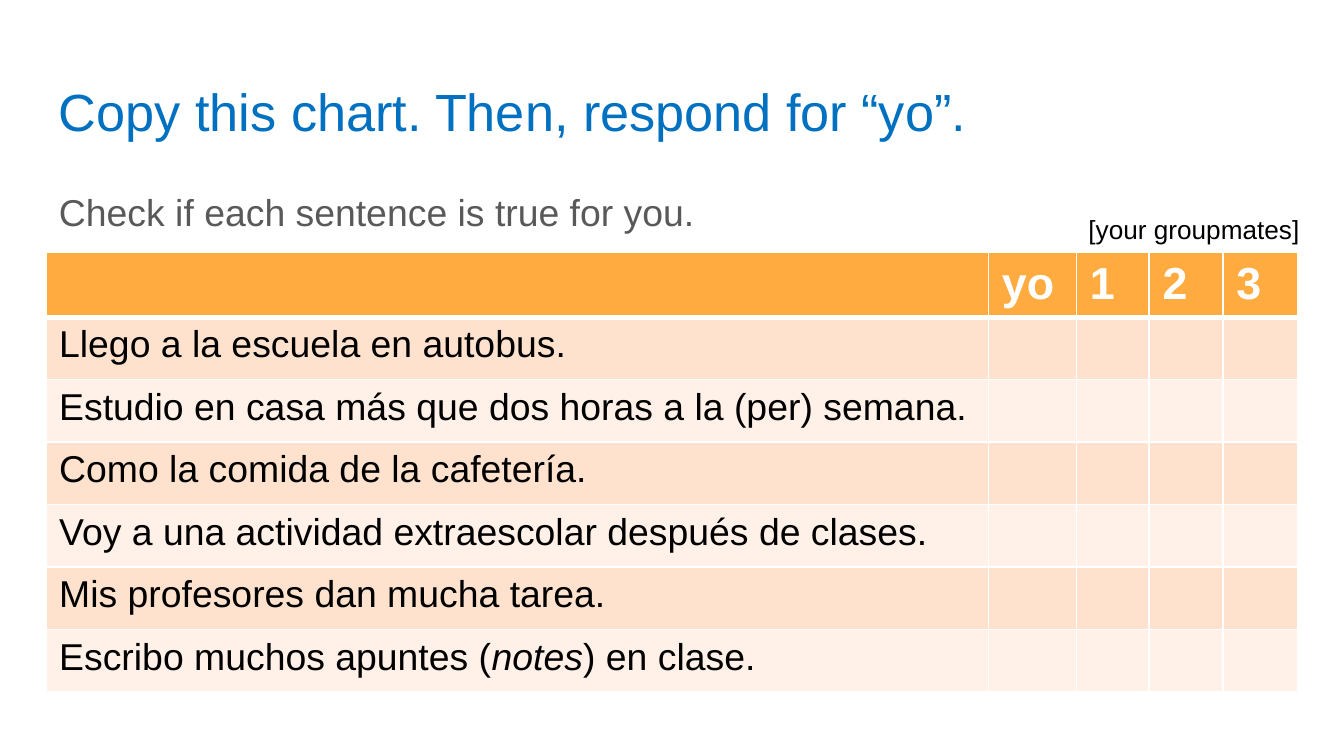
"""Build a Spanish class survey slide with a chart to copy and fill in."""
from dataclasses import dataclass

from lxml.etree import SubElement
from pptx import Presentation
from pptx.dml.color import RGBColor
from pptx.enum.text import MSO_ANCHOR
from pptx.oxml.ns import qn
from pptx.slide import Slide
from pptx.table import Table, _Cell
from pptx.text.text import _Paragraph
from pptx.util import Emu, Pt

PX = 4572
FONT = "Arial"
BLUE = RGBColor(0x00, 0x70, 0xC0)
GRAY = RGBColor(0x59, 0x59, 0x59)
BLACK = RGBColor(0x00, 0x00, 0x00)
WHITE = RGBColor(0xFF, 0xFF, 0xFF)
ORANGE = RGBColor(0xFF, 0xAB, 0x40)
PEACH = RGBColor(0xFF, 0xE2, 0xCD)
CREAM = RGBColor(0xFF, 0xF1, 0xE8)

COLUMN_WIDTHS = (1403, 131, 108, 110, 111)
ROW_HEIGHT = 93
HEADERS = ("", "yo", "1", "2", "3")
SENTENCES = (
    ("Llego a la escuela en autobus.",),
    ("Estudio en casa más que dos horas a la (per) semana.",),
    ("Como la comida de la cafetería.",),
    ("Voy a una actividad extraescolar después de clases.",),
    ("Mis profesores dan mucha tarea.",),
    ("Escribo muchos apuntes (", "notes", ") en clase."),
)


@dataclass(frozen=True)
class Label:
    text: str
    left: int
    top: int
    width: int
    height: int
    size: int
    color: RGBColor
    vertical_margin: int = 20
    line_spacing: float = 1.0


LABELS = (
    Label("Copy this chart. Then, respond for “yo”.", 68, 98, 1864, 126, 28, BLUE),
    Label("Check if each sentence is true for you.", 68, 252, 1864, 748, 20, GRAY,
          line_spacing=1.15),
    Label("[your groupmates]", 1600, 308, 356, 68, 14, BLACK, vertical_margin=10),
)


def px(length: int) -> Emu:
    return Emu(length * PX)


def set_font(paragraph: _Paragraph, size: int, color: RGBColor, bold: bool = False) -> None:
    font = paragraph.font
    font.name, font.size, font.bold = FONT, Pt(size), bold
    font.color.rgb = color


def add_label(slide: Slide, label: Label) -> None:
    shape = slide.shapes.add_textbox(
        px(label.left), px(label.top), px(label.width), px(label.height))
    frame = shape.text_frame
    frame.word_wrap = True
    frame.vertical_anchor = MSO_ANCHOR.TOP
    frame.margin_left = frame.margin_right = px(20)
    frame.margin_top = frame.margin_bottom = px(label.vertical_margin)
    paragraph = frame.paragraphs[0]
    paragraph.text = label.text
    paragraph.line_spacing = label.line_spacing
    set_font(paragraph, label.size, label.color)


def style_cell(cell: _Cell, fill: RGBColor, top: int = 1, bottom: int = 1) -> None:
    cell.margin_left = cell.margin_right = px(20)
    cell.margin_top = cell.margin_bottom = px(10)
    properties = cell._tc.get_or_add_tcPr()
    for side, points in (("L", 1), ("R", 1), ("T", top), ("B", bottom)):
        line = SubElement(properties, qn(f"a:ln{side}"), w=str(Pt(points)))
        solid = SubElement(line, qn("a:solidFill"))
        SubElement(solid, qn("a:srgbClr"), val=str(WHITE))
    cell.fill.solid()
    cell.fill.fore_color.rgb = fill


def fill_header(table: Table) -> None:
    for column, header in enumerate(HEADERS):
        cell = table.cell(0, column)
        style_cell(cell, ORANGE, bottom=3)
        cell.margin_bottom = px(6)
        paragraph = cell.text_frame.paragraphs[0]
        paragraph.text = header
        set_font(paragraph, 24, WHITE, bold=True)


def fill_sentence(table: Table, row: int, parts: tuple[str, ...]) -> None:
    for column in range(len(COLUMN_WIDTHS)):
        style_cell(table.cell(row, column), PEACH if row % 2 else CREAM,
                   top=3 if row == 1 else 1)
    paragraph = table.cell(row, 0).text_frame.paragraphs[0]
    set_font(paragraph, 20, BLACK)
    for index, part in enumerate(parts):
        run = paragraph.add_run()
        run.text = part
        run.font.italic = index % 2 == 1


def add_survey(slide: Slide) -> None:
    row_count = len(SENTENCES) + 1
    table = slide.shapes.add_table(
        row_count, len(COLUMN_WIDTHS), px(68), px(376),
        px(sum(COLUMN_WIDTHS)), px(ROW_HEIGHT * row_count)).table
    for column, width in zip(table.columns, COLUMN_WIDTHS):
        column.width = px(width)
    for row in table.rows:
        row.height = px(ROW_HEIGHT)
    fill_header(table)
    for row, parts in enumerate(SENTENCES, start=1):
        fill_sentence(table, row, parts)


def main() -> None:
    presentation = Presentation()
    presentation.slide_width, presentation.slide_height = px(2000), px(1125)
    slide = presentation.slides.add_slide(presentation.slide_layouts[6])
    title, instruction, groupmates = LABELS
    add_label(slide, title)
    add_label(slide, instruction)
    add_survey(slide)
    add_label(slide, groupmates)
    presentation.save("out.pptx")


if __name__ == "__main__":
    main()
